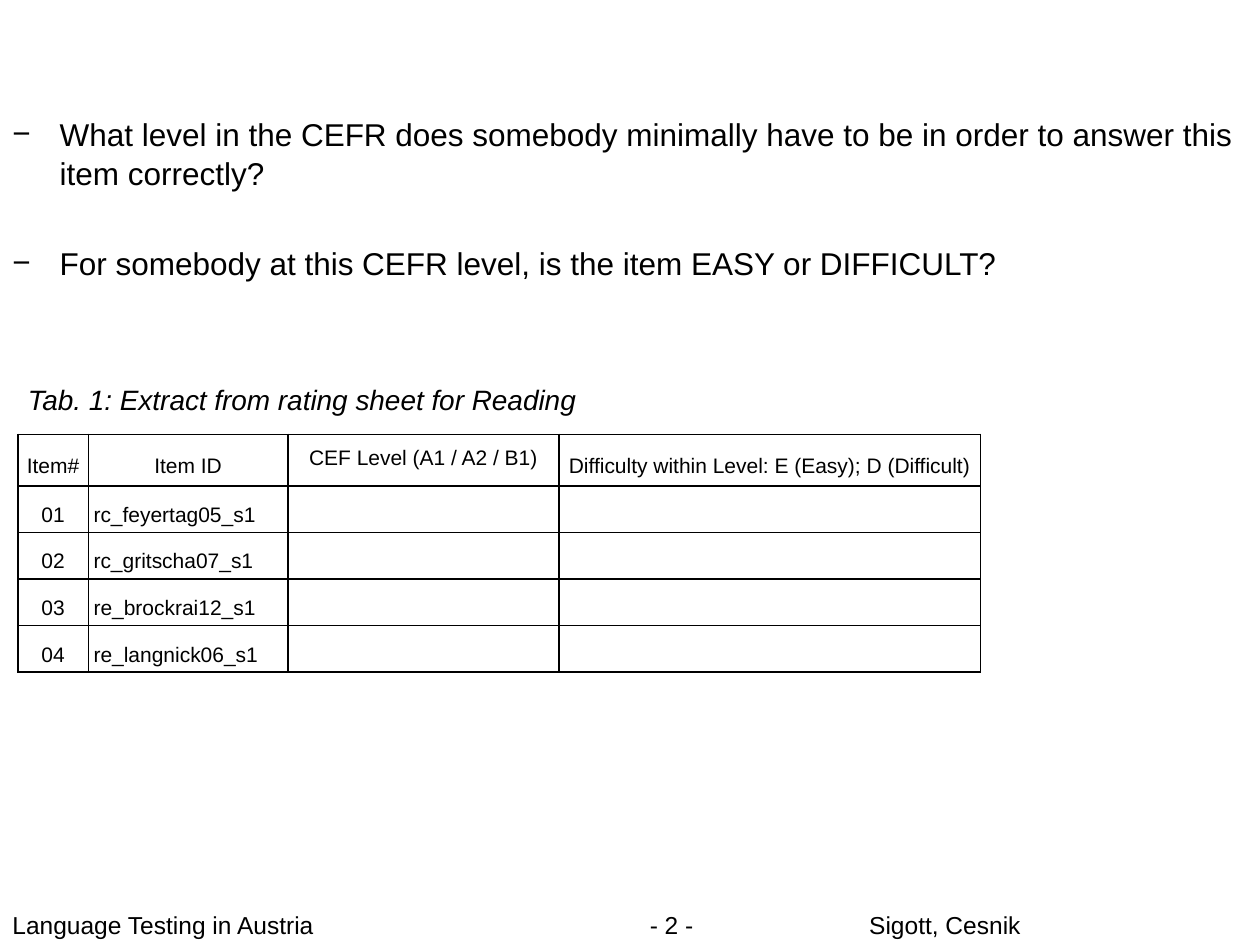
from pptx import Presentation
from pptx.dml.color import RGBColor
from pptx.enum.text import MSO_ANCHOR, PP_ALIGN
from pptx.oxml.ns import qn
from pptx.util import Pt
from lxml.etree import SubElement

BLACK = RGBColor(0, 0, 0)
WHITE = RGBColor(255, 255, 255)

QUESTIONS = [
    "What level in the CEFR does somebody minimally have to be in order to answer this item correctly?",
    "For somebody at this CEFR level, is the item EASY or DIFFICULT?",
]
CAPTION = "Tab. 1: Extract from rating sheet for Reading"
HEADINGS = ["Item#", "Item ID", "CEF Level (A1 / A2 / B1)",
            "Difficulty within Level: E (Easy); D (Difficult)"]
ITEM_IDS = ["rc_feyertag05_s1", "rc_gritscha07_s1", "re_brockrai12_s1", "re_langnick06_s1"]


class SlideWriter:
    font = "Arial"
    color = BLACK
    line_spacing = 1.05

    def __init__(self, slide):
        self.slide = slide
        slide.background.fill.solid()
        slide.background.fill.fore_color.rgb = WHITE

    def run(self, paragraph, text, size, italic=False):
        run = paragraph.add_run()
        run.text = text
        run.font.name = self.font
        run.font.size = Pt(size)
        run.font.italic = italic
        run.font.color.rgb = self.color

    def frame(self, left, top, width, height):
        frame = self.slide.shapes.add_textbox(Pt(left), Pt(top), Pt(width), Pt(height)).text_frame
        frame.word_wrap = True
        return frame

    def footer(self, text, left, width, align=PP_ALIGN.LEFT):
        paragraph = self.frame(left, 516.2, width, 24).paragraphs[0]
        paragraph.alignment = align
        self.run(paragraph, text, 14)

    def indent(self, paragraph, margin, hanging=0):
        properties = paragraph._p.get_or_add_pPr()
        properties.set("marL", str(Pt(margin)))
        properties.set("indent", str(Pt(-hanging)))
        return properties

    def body(self, questions, caption):
        frame = self.frame(0, 0, 720, 496.8)
        frame.margin_top = Pt(64.4)
        for number, question in enumerate(questions):
            paragraph = frame.add_paragraph() if number else frame.paragraphs[0]
            properties = self.indent(paragraph, 27, 27)
            SubElement(properties, qn("a:buFont")).set("typeface", self.font)
            SubElement(properties, qn("a:buChar")).set("char", "−")
            paragraph.line_spacing = self.line_spacing
            if number:
                paragraph.space_before = Pt(28.6)
            self.run(paragraph, question, 18)
        paragraph = frame.add_paragraph()
        self.indent(paragraph, 8.9)
        paragraph.line_spacing = self.line_spacing
        paragraph.space_before = Pt(56.8)
        self.run(paragraph, caption, 16, italic=True)

    def borders(self, cell):
        properties = cell._tc.get_or_add_tcPr()
        for side in ("lnL", "lnR", "lnT", "lnB"):
            line = SubElement(properties, qn(f"a:{side}"), w=str(Pt(1)))
            fill = SubElement(line, qn("a:solidFill"))
            SubElement(fill, qn("a:srgbClr"), val=str(self.color))

    def cell(self, cell, text, align, anchor):
        cell.margin_left = cell.margin_right = Pt(3)
        cell.margin_top = cell.margin_bottom = 0
        cell.vertical_anchor = anchor
        self.borders(cell)
        cell.fill.background()
        paragraph = cell.text_frame.paragraphs[0]
        paragraph.alignment = align
        paragraph.line_spacing = 1.5
        paragraph.font.size = Pt(12)
        if text:
            self.run(paragraph, text, 12)

    def table(self, rows, left, top, widths, heights):
        table = self.slide.shapes.add_table(
            len(rows), len(widths), Pt(left), Pt(top), Pt(sum(widths)), Pt(sum(heights))).table
        table.first_row = table.horz_banding = False
        for column, width in zip(table.columns, widths):
            column.width = Pt(width)
        for r, (row, height) in enumerate(zip(rows, heights)):
            table.rows[r].height = Pt(height)
            for c, text in enumerate(row):
                align = PP_ALIGN.LEFT if r and c == 1 else PP_ALIGN.CENTER
                anchor = MSO_ANCHOR.TOP if c == 2 else MSO_ANCHOR.MIDDLE
                self.cell(table.cell(r, c), text, align, anchor)


def main():
    presentation = Presentation()
    presentation.slide_width, presentation.slide_height = Pt(720), Pt(540)
    writer = SlideWriter(presentation.slides.add_slide(presentation.slide_layouts[6]))
    writer.footer("Sigott, Cesnik", 468, 122.4, PP_ALIGN.RIGHT)
    writer.footer("Language Testing in Austria", 0, 342)
    writer.footer("- 2 -", 347.8, 72, PP_ALIGN.CENTER)
    writer.body(QUESTIONS, CAPTION)
    items = [[f"{number:02}", item, "", ""] for number, item in enumerate(ITEM_IDS, 1)]
    writer.table([HEADINGS] + items, 10.2, 248.2, [40.3, 114, 155, 240.7],
                 [29.5] + [26.6] * len(items))
    presentation.save("out.pptx")


if __name__ == "__main__":
    main()
